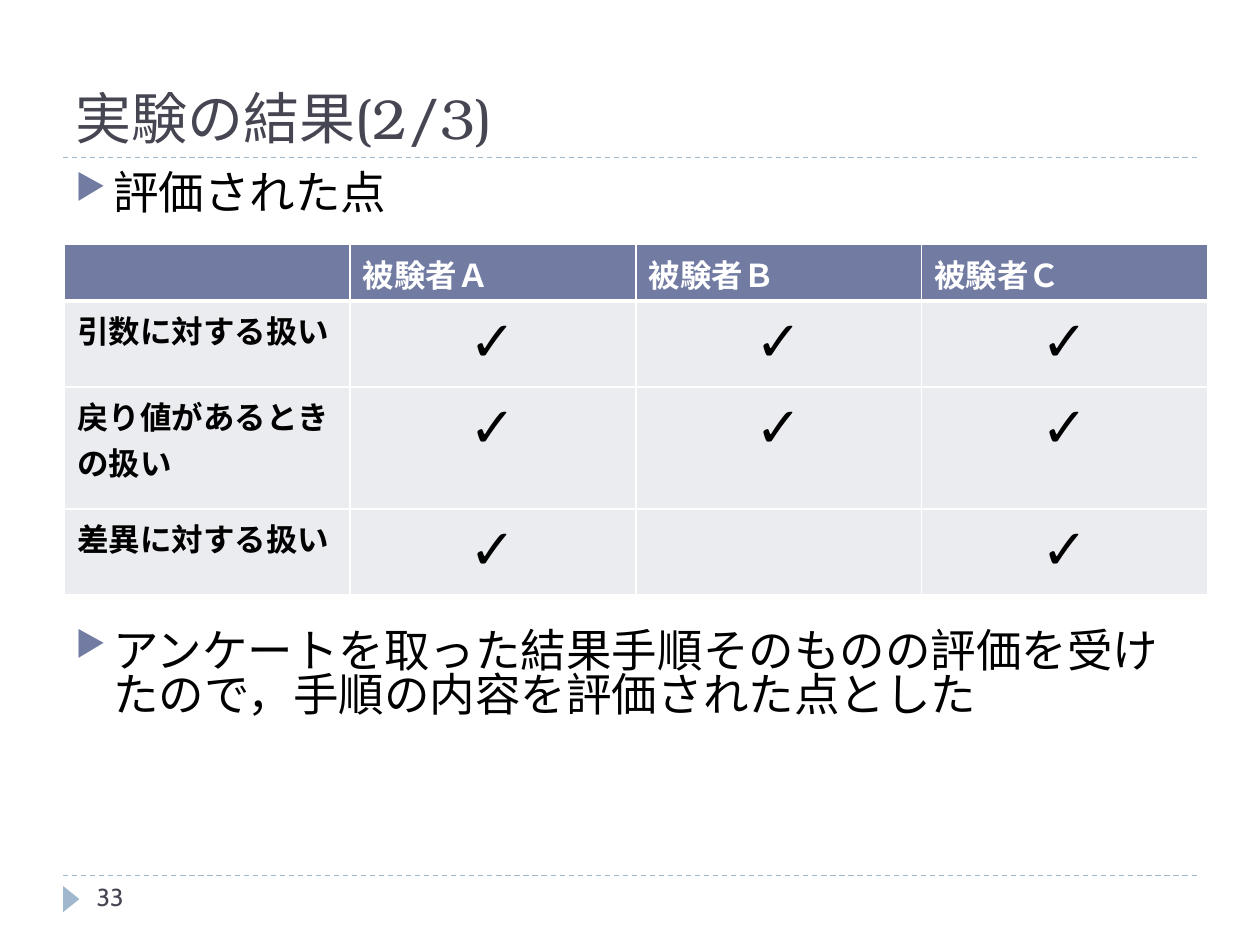
from lxml import etree
from pptx import Presentation
from pptx.dml.color import RGBColor
from pptx.enum.dml import MSO_LINE
from pptx.enum.shapes import MSO_CONNECTOR, MSO_SHAPE
from pptx.enum.text import MSO_ANCHOR, PP_ALIGN
from pptx.oxml.ns import qn
from pptx.util import Cm, Pt

STRAIGHT = MSO_CONNECTOR.STRAIGHT
TRIANGLE = MSO_SHAPE.ISOSCELES_TRIANGLE
DASH = MSO_LINE.DASH
TOP, BOTTOM = MSO_ANCHOR.TOP, MSO_ANCHOR.BOTTOM
LEFT, CENTER = PP_ALIGN.LEFT, PP_ALIGN.CENTER

INK = RGBColor(0x46, 0x46, 0x53)
BLACK = RGBColor(0x00, 0x00, 0x00)
WHITE = RGBColor(0xFF, 0xFF, 0xFF)
INDIGO = RGBColor(0x72, 0x7C, 0xA3)
SKY = RGBColor(0x9F, 0xB8, 0xCD)
PALE = RGBColor(0xEB, 0xEC, 0xF0)

HEADING = {"name": "TeX Gyre Bonum", "size": Pt(32)}
BODY = {"name": "Cabin", "size": Pt(26)}
NUMBER = {"name": "Cabin", "size": Pt(14)}
LABEL = {"name": "Cabin", "size": Pt(18), "bold": True}
MARK = {"name": "Cabin", "size": Pt(32), "bold": False}

CHECK = "✓"
SUBJECTS = ["", "被験者Ａ", "被験者Ｂ", "被験者Ｃ"]
RATINGS = [
    ["引数に対する扱い", CHECK, CHECK, CHECK],
    ["戻り値があるときの扱い", CHECK, CHECK, CHECK],
    ["差異に対する扱い", CHECK, "", CHECK],
]
ROW_HEIGHTS = [1.14, 1.73, 2.46, 1.73]
COLUMN_WIDTH = 5.76
MARGIN, CONTENT_WIDTH = 1.27, 22.86


def add_xml(parent, tag, **attributes):
    return etree.SubElement(parent, qn(tag), attributes)


class ResultSlide:
    def __init__(self, slide):
        self.slide = slide

    def styled_run(self, paragraph, wording, style, color, align=LEFT):
        paragraph.alignment = align
        run = paragraph.add_run()
        run.text = wording
        for key, value in style.items():
            setattr(run.font, key, value)
        run.font.color.rgb = color

    def text(self, left, top, width, height, wording, style, color, anchor=TOP):
        box = self.slide.shapes.add_textbox(Cm(left), Cm(top), Cm(width), Cm(height))
        frame = box.text_frame
        frame.word_wrap = True
        frame.vertical_anchor = anchor
        self.styled_run(frame.paragraphs[0], wording, style, color)
        return frame.paragraphs[0]

    def bullet(self, top, height, wording):
        point = self.text(MARGIN, top, CONTENT_WIDTH, height, wording, BODY, BLACK)
        point.space_before = Pt(6)
        point.line_spacing = 0.82
        properties = point._p.get_or_add_pPr()
        properties.set("marL", str(Cm(0.76)))
        properties.set("indent", str(Cm(-0.76)))
        add_xml(add_xml(properties, "a:buClr"), "a:srgbClr", val=str(INDIGO))
        add_xml(properties, "a:buSzPct", val="76000")
        add_xml(properties, "a:buChar", char="▶")

    def rule(self, top):
        line = self.slide.shapes.add_connector(
            STRAIGHT, Cm(MARGIN), Cm(top), Cm(MARGIN + CONTENT_WIDTH), Cm(top))
        line.line.color.rgb = SKY
        line.line.width = Pt(0.75)
        line.line.dash_style = DASH
        add_xml(line._element.spPr, "a:effectLst")

    def page_marker(self, left, top, width, height):
        marker = self.slide.shapes.add_shape(
            TRIANGLE, Cm(left), Cm(top), Cm(width), Cm(height))
        marker.rotation = 90
        marker.shadow.inherit = False
        marker.fill.solid()
        marker.fill.fore_color.rgb = SKY
        marker.line.fill.background()

    def cell(self, cell, wording, style, color, fill, align, borders):
        properties = cell._tc.get_or_add_tcPr()
        for side, points in borders.items():
            border = add_xml(properties, f"a:ln{side}", w=str(Pt(points)))
            add_xml(add_xml(border, "a:solidFill"), "a:srgbClr", val=str(WHITE))
        cell.fill.solid()
        cell.fill.fore_color.rgb = fill
        if wording:
            self.styled_run(cell.text_frame.paragraphs[0], wording, style, color, align)

    def table(self, left, top, rows):
        table = self.slide.shapes.add_table(
            len(rows), len(rows[0]), Cm(left), Cm(top),
            Cm(COLUMN_WIDTH * len(rows[0])), Cm(sum(ROW_HEIGHTS))).table
        for column in table.columns:
            column.width = Cm(COLUMN_WIDTH)
        for r, row in enumerate(rows):
            table.rows[r].height = Cm(ROW_HEIGHTS[r])
            borders = {"L": 1, "R": 1, "T": 3 if r == 1 else 1, "B": 3 if r == 0 else 1}
            color, fill = (WHITE, INDIGO) if r == 0 else (BLACK, PALE)
            for c, wording in enumerate(row):
                style, align = (MARK, CENTER) if wording == CHECK else (LABEL, LEFT)
                self.cell(table.cell(r, c), wording, style, color, fill, align, borders)


def main():
    deck = Presentation()
    deck.slide_width, deck.slide_height = Cm(25.4), Cm(19.05)
    result = ResultSlide(deck.slides.add_slide(deck.slide_layouts[6]))
    for top in (17.65, 3.18):
        result.rule(top)
    result.page_marker(1.17, 17.96, 0.53, 0.33)
    result.text(MARGIN, 0.43, CONTENT_WIDTH, 2.74, "実験の結果(2/3)", HEADING, INK, BOTTOM)
    result.text(1.7, 17.65, 5.51, 1.02, "33", NUMBER, INK)
    result.bullet(3.38, 1.4, "評価された点")
    result.bullet(12.6, 2.6, "アンケートを取った結果手順そのものの評価を受けたので，手順の内容を評価された点とした")
    result.table(1.3, 4.93, [SUBJECTS, *RATINGS])
    deck.save("out.pptx")


if __name__ == "__main__":
    main()
